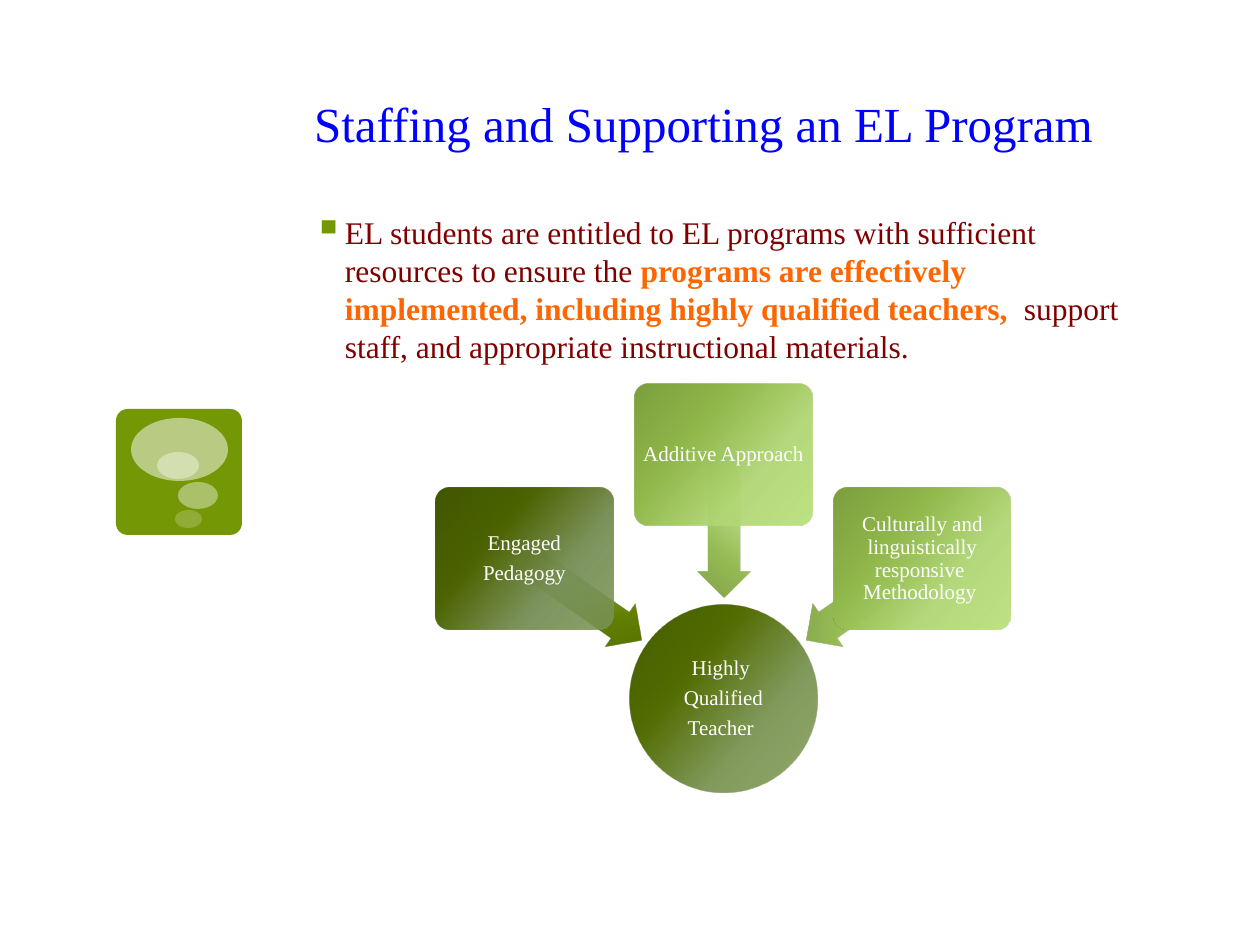
from lxml import etree
from pptx import Presentation, util as u
from pptx.dml.color import RGBColor
from pptx.enum import shapes, text
from pptx.oxml.ns import qn

PX = 7257  # EMU per pixel, 126 pixels to the inch
FONT = "Times New Roman"
COLORS = {
    "title": "0000FF", "body": "800000", "emphasis": "FF6600",
    "accent": "749805", "white": "FFFFFF",
}
# Gradients run from the bottom right to the top left.
GRADIENTS = {
    "teacher": ["7E9B51", "7D9656", "516C00", "465D00"],
    "dark box": ["799353", "788F57", "4B6300", "415600"],
    "dark arrow": ["8BB24D", "8AAB54", "618000", "546F00"],
    "light box": ["B3DE6E", "B1D776", "8FB749", "7C9E3F"],
    "light arrow": ["B9E278", "B7DB7F", "95BB55", "81A149"],
}
STOPS = [(0, 85), (33, 95), (67, 100), (100, 100)]  # position, opacity
KIND = shapes.MSO_SHAPE


def add_shape(kind, box, fill, opacity=100, adjustments=(), rotation=0):
    """Add a borderless shape; fill names an entry of COLORS or GRADIENTS."""
    shape = slide.shapes.add_shape(kind, *(v * PX for v in box))
    shape.shadow.inherit = False
    shape.line.fill.background()
    shape.rotation = rotation
    for i, value in enumerate(adjustments):
        shape.adjustments[i] = value
    if fill in COLORS:
        shape.fill.solid()
        shape.fill.fore_color.rgb = RGBColor.from_string(COLORS[fill])
        if opacity < 100:
            color = next(shape.element.spPr.iter(qn("a:srgbClr")))
            etree.SubElement(color, qn("a:alpha"), val=str(opacity * 1000))
        return shape
    shape.fill.gradient()
    shape.fill.gradient_angle = 140
    stop_list = next(shape.element.spPr.iter(qn("a:gsLst")))
    for old in list(stop_list):
        stop_list.remove(old)
    for hex_color, (position, alpha) in zip(GRADIENTS[fill], STOPS):
        stop = etree.SubElement(stop_list, qn("a:gs"), pos=str(position * 1000))
        color = etree.SubElement(stop, qn("a:srgbClr"), val=hex_color)
        etree.SubElement(color, qn("a:alpha"), val=str(alpha * 1000))
    return shape


def write(frame, paragraphs, size=12, align=text.PP_ALIGN.CENTER,
          anchor=text.MSO_ANCHOR.MIDDLE, inset=None, line=None, after=0):
    """Fill a frame; each paragraph is a list of (words, color, bold) runs."""
    frame.word_wrap = True
    frame.auto_size = text.MSO_AUTO_SIZE.NONE
    frame.vertical_anchor = anchor
    if inset is not None:
        frame.margin_left = frame.margin_right = inset * PX
        frame.margin_top = frame.margin_bottom = inset * PX
    for i, runs in enumerate(paragraphs):
        paragraph = frame.add_paragraph() if i else frame.paragraphs[0]
        paragraph.alignment = align
        paragraph.space_after = u.Pt(after)
        if line:
            paragraph.line_spacing = line
        for words, color, bold in runs:
            run = paragraph.add_run()
            run.text = words
            run.font.name, run.font.size, run.font.bold = FONT, u.Pt(size), bold
            run.font.color.rgb = RGBColor.from_string(COLORS[color])


deck = Presentation()
deck.slide_width, deck.slide_height = u.Inches(10), u.Inches(7.5)
slide = deck.slides.add_slide(deck.slide_layouts[5])

# Thought-bubble icon
add_shape(KIND.ROUNDED_RECTANGLE, (116, 409, 126, 126), "accent", adjustments=[0.093])
for bubble, opacity in [((131, 418, 97, 63), 50), ((178, 482, 40, 27), 40),
                        ((175, 510, 27, 18), 20), ((157, 452, 42, 27), 38)]:
    add_shape(KIND.OVAL, bubble, "white", opacity)

# Title and statement
title = slide.shapes.title
title.left, title.top, title.width, title.height = (v * PX for v in (251, 54, 905, 105))
write(title.text_frame, [[("Staffing and Supporting an EL Program", "title", False)]],
      size=28, anchor=text.MSO_ANCHOR.BOTTOM)

statement = slide.shapes.add_textbox(*(v * PX for v in (301, 207, 853, 638))).text_frame
write(statement, [[
    ("EL students are entitled to EL programs with sufficient resources to ensure the ",
     "body", False),
    ("programs are effectively implemented, including highly qualified teachers,  ",
     "emphasis", True),
    ("support staff, and appropriate instructional materials.", "body", False),
]], size=18, align=text.PP_ALIGN.LEFT, anchor=text.MSO_ANCHOR.TOP)
bullet = statement.paragraphs[0]._p.get_or_add_pPr()
bullet.set("marL", str(u.Inches(0.25)))
bullet.set("indent", str(-u.Inches(0.25)))
bullet_color = etree.SubElement(bullet, qn("a:buClr"))
etree.SubElement(bullet_color, qn("a:srgbClr"), val=COLORS["accent"])
etree.SubElement(bullet, qn("a:buSzPct"), val="130000")
etree.SubElement(bullet, qn("a:buChar"), char="▪")

# Three approaches converging on the teacher
teacher = add_shape(KIND.OVAL, (630, 605, 187, 187), "teacher")
write(teacher.text_frame,
      [[(words, "white", False)] for words in ("Highly ", "Qualified", "Teacher ")],
      inset=1, line=0.9, after=4.2)

approaches = [
    (["Engaged", "Pedagogy"], "dark", 488, 573, 215),
    (["Additive Approach "], "light", 384, 500, 270),
    (["Culturally and linguistically responsive  Methodology "], "light", 488, 573, 325),
]
for i, (lines, tone, box_top, arrow_top, angle) in enumerate(approaches):
    add_shape(KIND.LEFT_ARROW, (512 + 141 * i, arrow_top, 142, 53), f"{tone} arrow",
              adjustments=[0.6, 0.5], rotation=angle)
    approach = add_shape(KIND.ROUNDED_RECTANGLE, (436 + 199 * i, box_top, 177, 142),
                         f"{tone} box", adjustments=[0.1])
    write(approach.text_frame, [[(words, "white", False)] for words in lines],
          inset=3, line=0.9, after=4.2)

deck.save("out.pptx")
